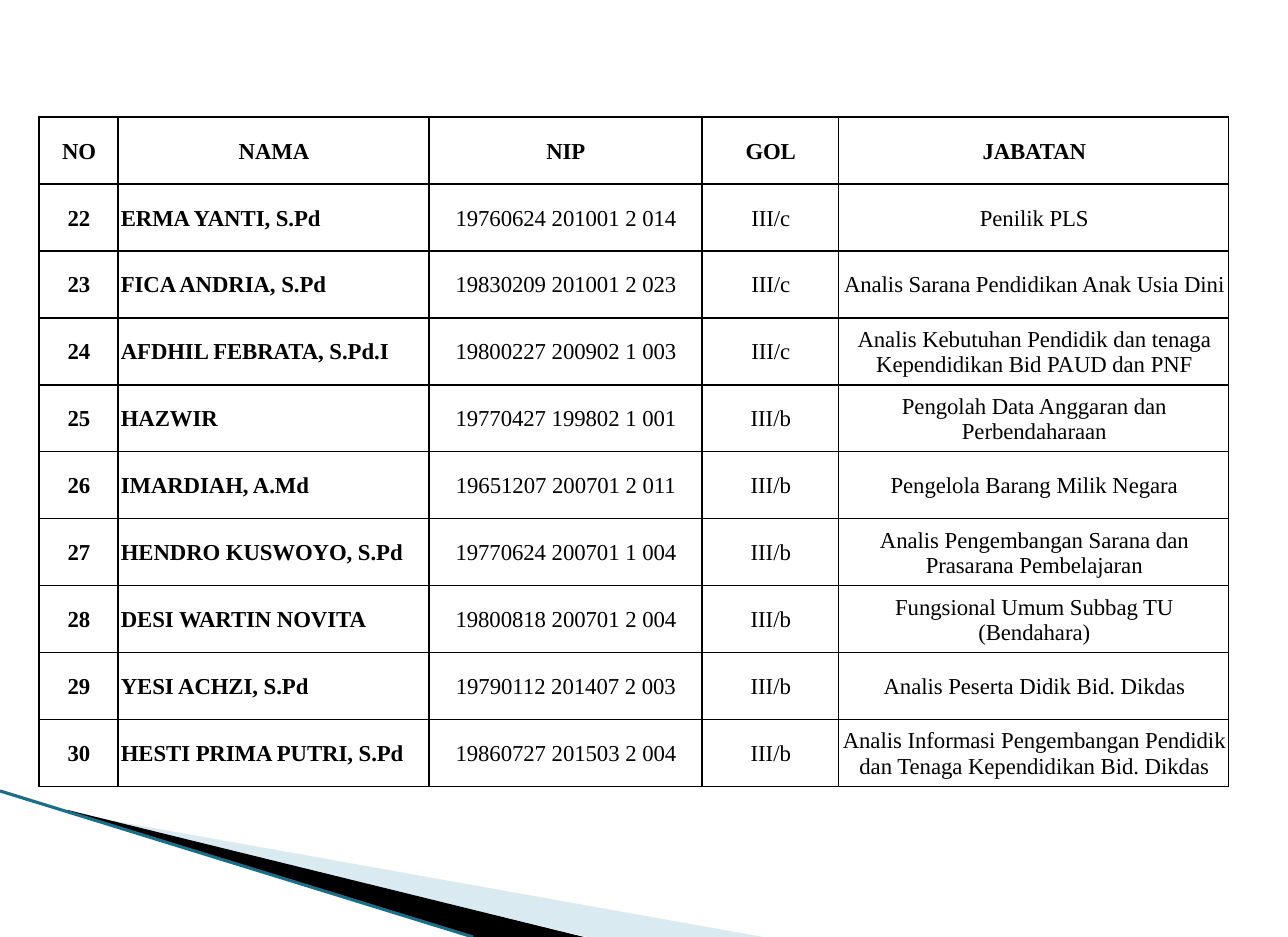
from dataclasses import dataclass
from lxml.etree import SubElement
from pptx import Presentation
from pptx.dml.color import RGBColor
from pptx.enum.shapes import MSO_CONNECTOR
from pptx.enum.text import MSO_ANCHOR, PP_ALIGN
from pptx.oxml.ns import qn
from pptx.util import Pt

PX = 3904


@dataclass(frozen=True)
class Theme:
    font: str = "Times New Roman"
    size: float = 7
    ink: str = "000000"
    pale: str = "A0CBDC"
    teal: str = "1B6E87"
    pale_alpha: int = 40
    border: float = 0.5
    stripe: float = 0.95


theme = Theme()
HEADINGS = ["NO", "NAMA", "NIP", "GOL", "JABATAN"]
STAFF = [
    ("ERMA YANTI, S.Pd", "19760624 201001 2 014", "III/c", "Penilik PLS"),
    ("FICA ANDRIA, S.Pd", "19830209 201001 2 023", "III/c", "Analis Sarana Pendidikan Anak Usia Dini"),
    ("AFDHIL FEBRATA, S.Pd.I", "19800227 200902 1 003", "III/c",
     "Analis Kebutuhan Pendidik dan tenaga Kependidikan Bid PAUD dan PNF"),
    ("HAZWIR", "19770427 199802 1 001", "III/b", "Pengolah Data Anggaran dan Perbendaharaan"),
    ("IMARDIAH, A.Md", "19651207 200701 2 011", "III/b", "Pengelola Barang Milik Negara"),
    ("HENDRO KUSWOYO, S.Pd", "19770624 200701 1 004", "III/b",
     "Analis Pengembangan Sarana dan Prasarana Pembelajaran"),
    ("DESI WARTIN NOVITA", "19800818 200701 2 004", "III/b", "Fungsional Umum Subbag TU (Bendahara)"),
    ("YESI ACHZI, S.Pd", "19790112 201407 2 003", "III/b", "Analis Peserta Didik Bid. Dikdas"),
    ("HESTI PRIMA PUTRI, S.Pd", "19860727 201503 2 004", "III/b",
     "Analis Informasi Pengembangan Pendidik dan Tenaga Kependidikan Bid. Dikdas"),
]
FIRST_NUMBER = 22
COLUMN_WIDTHS = [79, 311, 273, 137, 390]
ROW_HEIGHT = 67

deck = Presentation()
deck.slide_width, deck.slide_height = 1288 * PX, 937 * PX
page = deck.slides.add_slide(deck.slide_layouts[6])

wedges = [
    ([(70, 813), (764, 937), (588, 937)], theme.pale, theme.pale_alpha),
    ([(68, 810), (584, 937), (474, 937), (70, 813)], theme.ink, 100),
]
for points, colour, alpha in wedges:
    builder = page.shapes.build_freeform(*points[0], scale=PX)
    builder.add_line_segments(points[1:], close=True)
    wedge = builder.convert_to_shape()
    wedge.shadow.inherit = False
    wedge.line.fill.background()
    wedge.fill.solid()
    wedge.fill.fore_color.rgb = RGBColor.from_string(colour)
    if alpha < 100:
        tint = wedge._element.spPr.find(".//" + qn("a:srgbClr"))
        SubElement(tint, qn("a:alpha"), val=str(alpha * 1000))

stripe = page.shapes.add_connector(MSO_CONNECTOR.STRAIGHT, 0, 791 * PX, 473 * PX, 937 * PX)
stripe.line.color.rgb = RGBColor.from_string(theme.teal)
stripe.line.width = Pt(theme.stripe)
SubElement(stripe._element.spPr, qn("a:effectLst"))

records = [HEADINGS] + [(str(number), *person) for number, person in enumerate(STAFF, FIRST_NUMBER)]
table = page.shapes.add_table(
    len(records), len(HEADINGS), 39 * PX, 117 * PX,
    sum(COLUMN_WIDTHS) * PX, len(records) * ROW_HEIGHT * PX,
).table
table.first_row = table.horz_banding = False
for column, width in zip(table.columns, COLUMN_WIDTHS):
    column.width = width * PX

for row_index, record in enumerate(records):
    table.rows[row_index].height = ROW_HEIGHT * PX
    for column_index, text in enumerate(record):
        cell = table.cell(row_index, column_index)
        cell.margin_left = 3 * PX
        cell.margin_right = cell.margin_top = 2 * PX
        cell.margin_bottom = 0
        cell.vertical_anchor = MSO_ANCHOR.MIDDLE
        properties = cell._tc.get_or_add_tcPr()
        for side in ("a:lnL", "a:lnR", "a:lnT", "a:lnB"):
            edge = SubElement(properties, qn(side), w=str(Pt(theme.border)))
            SubElement(SubElement(edge, qn("a:solidFill")), qn("a:srgbClr"), val=theme.ink)
        cell.fill.background()
        para = cell.text_frame.paragraphs[0]
        para.text = text
        is_name = row_index > 0 and column_index == 1
        para.alignment = PP_ALIGN.LEFT if is_name else PP_ALIGN.CENTER
        font = para.runs[0].font
        font.name, font.size = theme.font, Pt(theme.size)
        font.bold = row_index == 0 or column_index < 2
        font.color.rgb = RGBColor.from_string(theme.ink)

deck.save("out.pptx")
